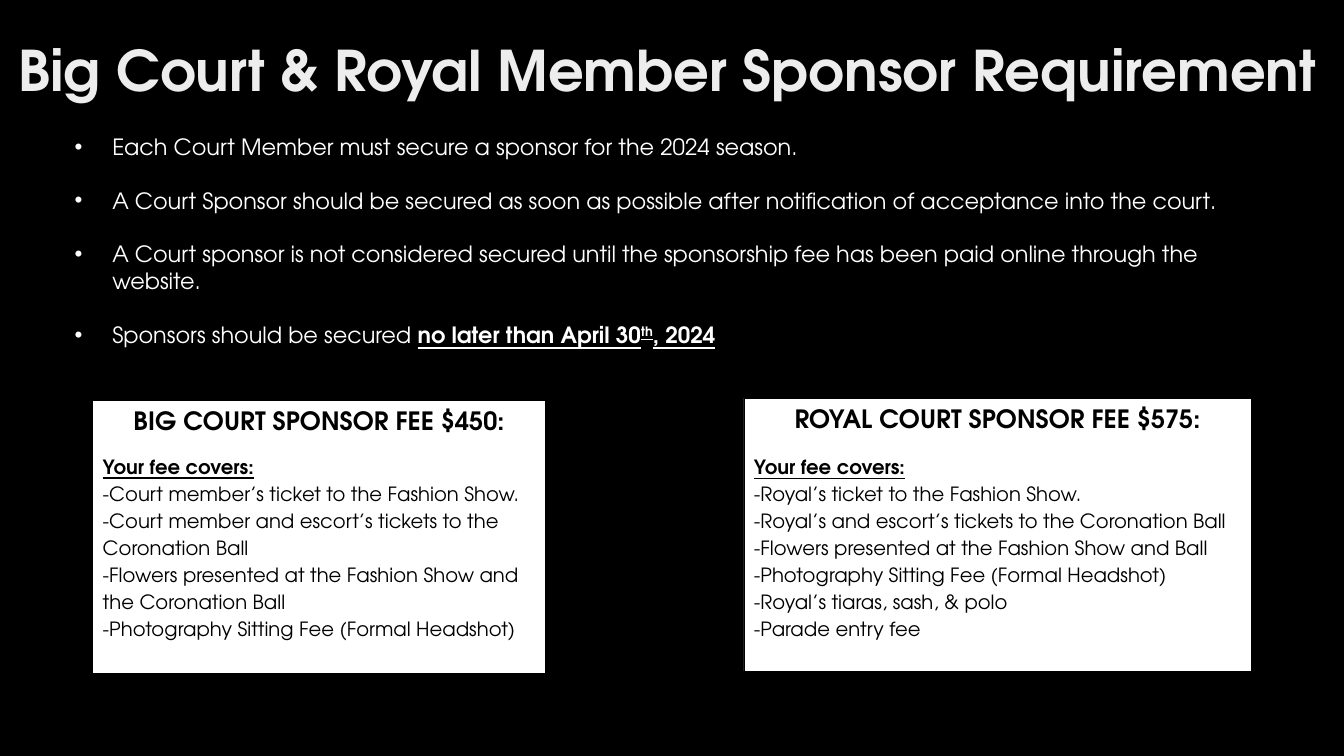
from dataclasses import dataclass

from lxml import etree
from pptx import Presentation
from pptx.dml.color import RGBColor
from pptx.enum import shapes, text
from pptx.oxml import ns
from pptx.util import Cm, Pt


@dataclass(frozen=True)
class Theme:
    font: str = "TeX Gyre Adventor"
    black: RGBColor = RGBColor(0, 0, 0)
    white: RGBColor = RGBColor(255, 255, 255)
    silver: RGBColor = RGBColor(0xED, 0xED, 0xED)
    title: int = 40
    body: int = 16
    heading: int = 18
    detail: int = 14


THEME = Theme()

REQUIREMENTS = [
    "Each Court Member must secure a sponsor for the 2024 season.",
    "A Court Sponsor should be secured as soon as possible after "
    "notification of acceptance into the court.",
    "A Court sponsor is not considered secured until the sponsorship fee "
    "has been paid online through the website.",
    "Sponsors should be secured ",
]
DEADLINE = ["no later than April 30", "th", ", 2024"]

BIG_COURT = [
    "-Court member’s ticket to the Fashion Show.",
    "-Court member and escort’s tickets to the Coronation Ball",
    "-Flowers presented at the Fashion Show and the Coronation Ball",
    "-Photography Sitting Fee (Formal Headshot)",
]
ROYAL_COURT = [
    "-Royal’s ticket to the Fashion Show.",
    "-Royal’s and escort’s tickets to the Coronation Ball",
    "-Flowers presented at the Fashion Show and Ball",
    "-Photography Sitting Fee (Formal Headshot)",
    "-Royal’s tiaras, sash, & polo",
    "-Parade entry fee",
]


def style(paragraph, size, color, bold=False, underline=False):
    font = paragraph.font
    font.name = THEME.font
    font.size = Pt(size)
    font.bold = bold
    font.underline = underline
    font.color.rgb = color


def next_paragraph(frame, index):
    """Return the frame's own first paragraph for index 0, else a new one."""
    return frame.add_paragraph() if index else frame.paragraphs[0]


def add_bullet(paragraph, indent):
    properties = paragraph._p.get_or_add_pPr()
    properties.set("marL", str(indent))
    properties.set("indent", str(-indent))
    etree.SubElement(properties, ns.qn("a:buFont"), typeface="Arial")
    etree.SubElement(properties, ns.qn("a:buChar"), char="•")


def place_title(slide, left, top, width, height):
    title = slide.shapes.title
    title.left, title.top, title.width, title.height = left, top, width, height
    frame = title.text_frame
    frame.text = "Big Court & Royal Member Sponsor Requirement"
    frame.word_wrap = True
    frame.auto_size = text.MSO_AUTO_SIZE.NONE
    frame.vertical_anchor = text.MSO_ANCHOR.MIDDLE
    paragraph = frame.paragraphs[0]
    paragraph.alignment = text.PP_ALIGN.LEFT
    paragraph.line_spacing = 0.9
    style(paragraph, THEME.title, THEME.silver, bold=True)


def add_requirements(slide, left, top, width, height):
    """Add the bulleted rules, the last one ending in the deadline."""
    frame = slide.shapes.add_textbox(left, top, width, height).text_frame
    frame.word_wrap = True
    for index, requirement in enumerate(REQUIREMENTS):
        paragraph = next_paragraph(frame, index)
        paragraph.add_run().text = requirement
        if index:
            paragraph.space_before = Pt(19.2)
        add_bullet(paragraph, Cm(0.95))
        style(paragraph, THEME.body, THEME.white)
    for part in DEADLINE:
        run = paragraph.add_run()
        run.text = part
        run.font.bold = run.font.underline = True
        if part == "th":
            run._r.get_or_add_rPr().set("baseline", "30000")


def add_fee_card(slide, left, top, width, height, heading, benefits, label_spacing):
    card = slide.shapes.add_shape(
        shapes.MSO_SHAPE.RECTANGLE, left, top, width, height)
    card.shadow.inherit = False
    card.fill.solid()
    card.fill.fore_color.rgb = THEME.white
    card.line.color.rgb = THEME.black
    card.line.width = Pt(0.5)
    frame = card.text_frame
    frame.word_wrap = True
    frame.vertical_anchor = text.MSO_ANCHOR.TOP

    for index, line in enumerate([heading, "Your fee covers:", *benefits]):
        paragraph = next_paragraph(frame, index)
        paragraph.add_run().text = line
        paragraph.alignment = text.PP_ALIGN.LEFT if index else text.PP_ALIGN.CENTER
        if index == 1:
            paragraph.space_before = Pt(13.2)
            paragraph.line_spacing = label_spacing
        elif index > 1:
            paragraph.line_spacing = 1.15
        style(paragraph, THEME.detail if index else THEME.heading, THEME.black,
              bold=index < 2, underline=index == 1)


def build_sponsor_slide(presentation):
    slide = presentation.slides.add_slide(presentation.slide_layouts[5])
    background = slide.background.fill
    background.solid()
    background.fore_color.rgb = THEME.black
    place_title(slide, Cm(0.2), Cm(0), Cm(35.1), Cm(3.68))
    add_requirements(slide, Cm(1.63), Cm(3.23), Cm(30.43), Cm(5.74))
    add_fee_card(slide, Cm(2.34), Cm(10.1), Cm(11.4), Cm(6.88),
                 "BIG COURT SPONSOR FEE $450:", BIG_COURT, 1.0)
    add_fee_card(slide, Cm(18.75), Cm(10.03), Cm(12.78), Cm(6.88),
                 "ROYAL COURT SPONSOR FEE $575:", ROYAL_COURT, 1.15)


def main():
    presentation = Presentation()
    presentation.slide_width = Cm(33.87)
    presentation.slide_height = Cm(19.05)
    build_sponsor_slide(presentation)
    presentation.save("out.pptx")


if __name__ == "__main__":
    main()
